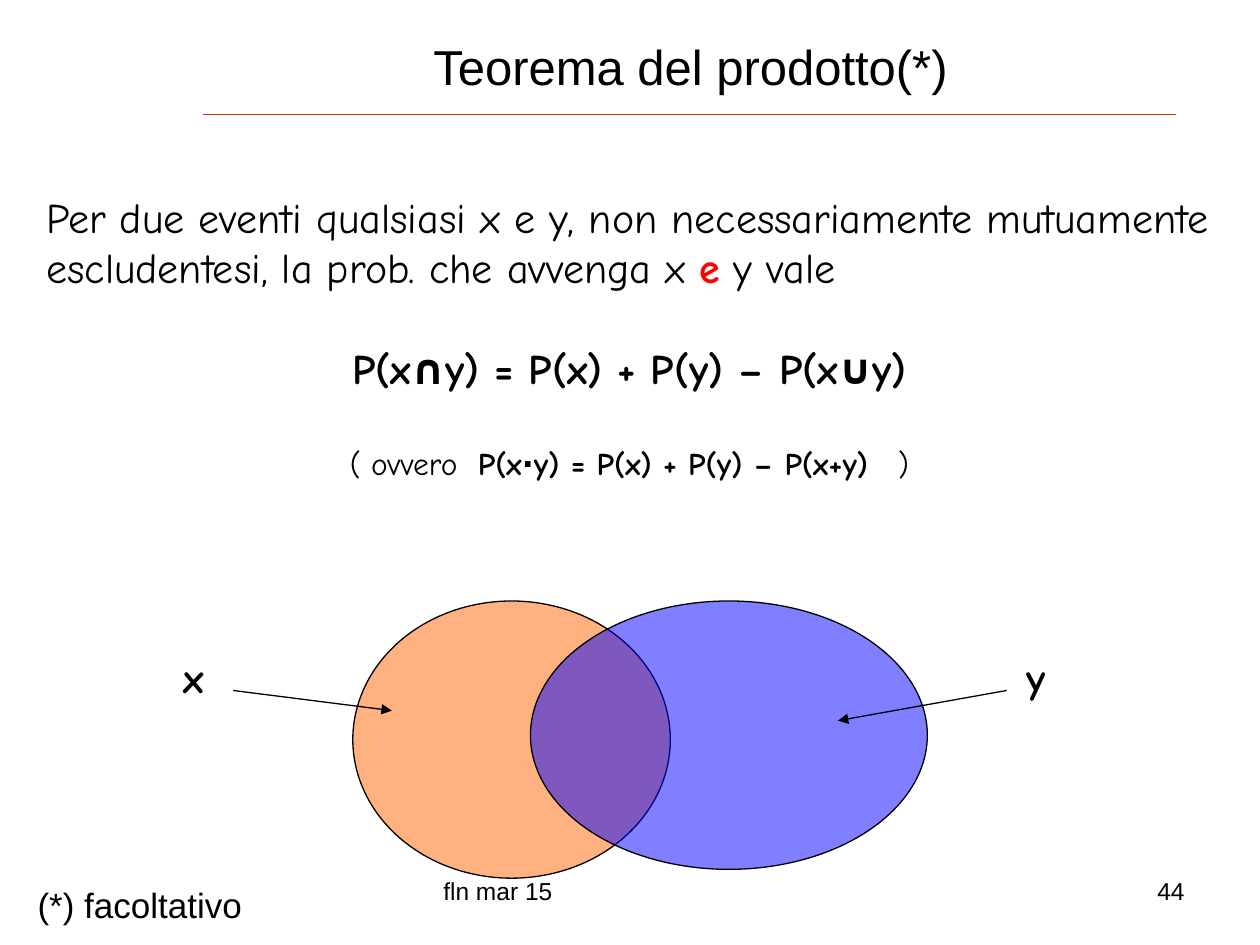
import pptx
import pptx.dml.color
import pptx.enum.shapes
import pptx.enum.text
import pptx.oxml.ns
import pptx.util
from lxml import etree
from pptx.util import Inches

BLACK = pptx.dml.color.RGBColor(0x00, 0x00, 0x00)
RED = pptx.dml.color.RGBColor(0xFF, 0x00, 0x00)
RULE = pptx.dml.color.RGBColor(0xCC, 0x33, 0x00)
ORANGE = pptx.dml.color.RGBColor(0xFF, 0x66, 0x00)
BLUE = pptx.dml.color.RGBColor(0x00, 0x00, 0xFF)
SANS = "Arial"
COMIC = "Comic Neue"
ALIGN = pptx.enum.text.PP_ALIGN
qn = pptx.oxml.ns.qn


def add_text(p, text, size=24, font=COMIC, color=BLACK, bold=False, spacing=0):
    r = p.add_run()
    r.text = text
    r.font.size = pptx.util.Pt(size)
    r.font.name = font
    r.font.bold = bold
    r.font.color.rgb = color
    if spacing:
        r.font._element.set("spc", str(int(spacing * 100)))


def add_line(x1, y1, x2, y2, color=BLACK, arrow=True):
    line = slide.shapes.add_connector(
        pptx.enum.shapes.MSO_CONNECTOR.STRAIGHT,
        Inches(x1), Inches(y1), Inches(x2), Inches(y2))
    line.line.color.rgb = color
    line.line.width = pptx.util.Pt(0.75)
    if arrow:
        etree.SubElement(line.line._get_or_add_ln(), qn("a:tailEnd"), type="triangle")
    etree.SubElement(line._element.spPr, qn("a:effectLst"))


prs = pptx.Presentation()
prs.slide_width = Inches(10)
prs.slide_height = Inches(7.5)
slide = prs.slides.add_slide(prs.slide_layouts[5])

title = slide.shapes.title
title.left, title.top = Inches(1.53), Inches(0.21)
title.width, title.height = Inches(7.9), Inches(0.63)
tf = title.text_frame
tf.vertical_anchor = pptx.enum.text.MSO_ANCHOR.MIDDLE
p = tf.paragraphs[0]
p.alignment = ALIGN.CENTER
add_text(p, "Teorema del prodotto(*)", size=28, font=SANS)
add_line(1.61, 0.91, 9.33, 0.91, color=RULE, arrow=False)

body = slide.shapes.add_textbox(Inches(0.27), Inches(1.47), Inches(9.45), Inches(2.83))
tf = body.text_frame
tf.word_wrap = True
p = tf.paragraphs[0]
add_text(p, "Per due eventi qualsiasi x e y, non necessariamente mutuamente "
            "escludentesi, la prob. che avvenga x ")
add_text(p, "e", color=RED, bold=True)
add_text(p, " y vale")

formulas = [
    [("P(x∩y) = P(x) + P(y) – P(x∪y)", dict(bold=True))],
    [("( ovvero", dict(size=18)),
     (" ", dict(size=18, spacing=5.5)),
     ("P(x", dict(size=18, bold=True)),
     ("⋅", dict(size=18, font=SANS, bold=True)),
     ("y) = P(x) + P(y) – P(x+y)", dict(size=18, bold=True)),
     (" ", dict(size=18, spacing=11)),
     (")", dict(size=18))],
]
for runs in formulas:
    p = tf.add_paragraph()
    p.alignment = ALIGN.CENTER
    p.space_before = pptx.util.Pt(29)
    for text, style in runs:
        add_text(p, text, **style)

for x, y, w, h, color in [(2.8, 4.77, 2.52, 2.2, ORANGE), (4.21, 4.77, 3.15, 2.13, BLUE)]:
    sp = slide.shapes.add_shape(
        pptx.enum.shapes.MSO_SHAPE.OVAL, Inches(x), Inches(y), Inches(w), Inches(h))
    sp.shadow.inherit = False
    sp.fill.solid()
    sp.fill.fore_color.rgb = color
    clr = sp._element.spPr.find(qn("a:solidFill")).find(qn("a:srgbClr"))
    etree.SubElement(clr, qn("a:alpha"), val="50000")
    sp.line.color.rgb = BLACK
    sp.line.width = pptx.util.Pt(0.75)

add_line(1.85, 5.48, 3.11, 5.64)
add_line(7.99, 5.48, 6.65, 5.72)

labels = [
    ("x", 1.36, 5.12, 0.4, 0.5, ALIGN.LEFT, dict(bold=True)),
    ("y", 8.05, 5.12, 0.39, 0.5, ALIGN.LEFT, dict(bold=True)),
    ("(*) facoltativo", 0.19, 6.96, 1.84, 0.44, ALIGN.CENTER, dict(size=20, font=SANS)),
    ("fln mar 15", 3.42, 6.9, 3.17, 0.45, ALIGN.LEFT, dict(size=14, font=SANS)),
    ("44", 7.17, 6.9, 2.33, 0.45, ALIGN.RIGHT, dict(size=14, font=SANS)),
]
for text, x, y, w, h, align, style in labels:
    box = slide.shapes.add_textbox(Inches(x), Inches(y), Inches(w), Inches(h))
    box.text_frame.word_wrap = w > 2
    p = box.text_frame.paragraphs[0]
    p.alignment = align
    add_text(p, text, **style)

prs.save("out.pptx")
